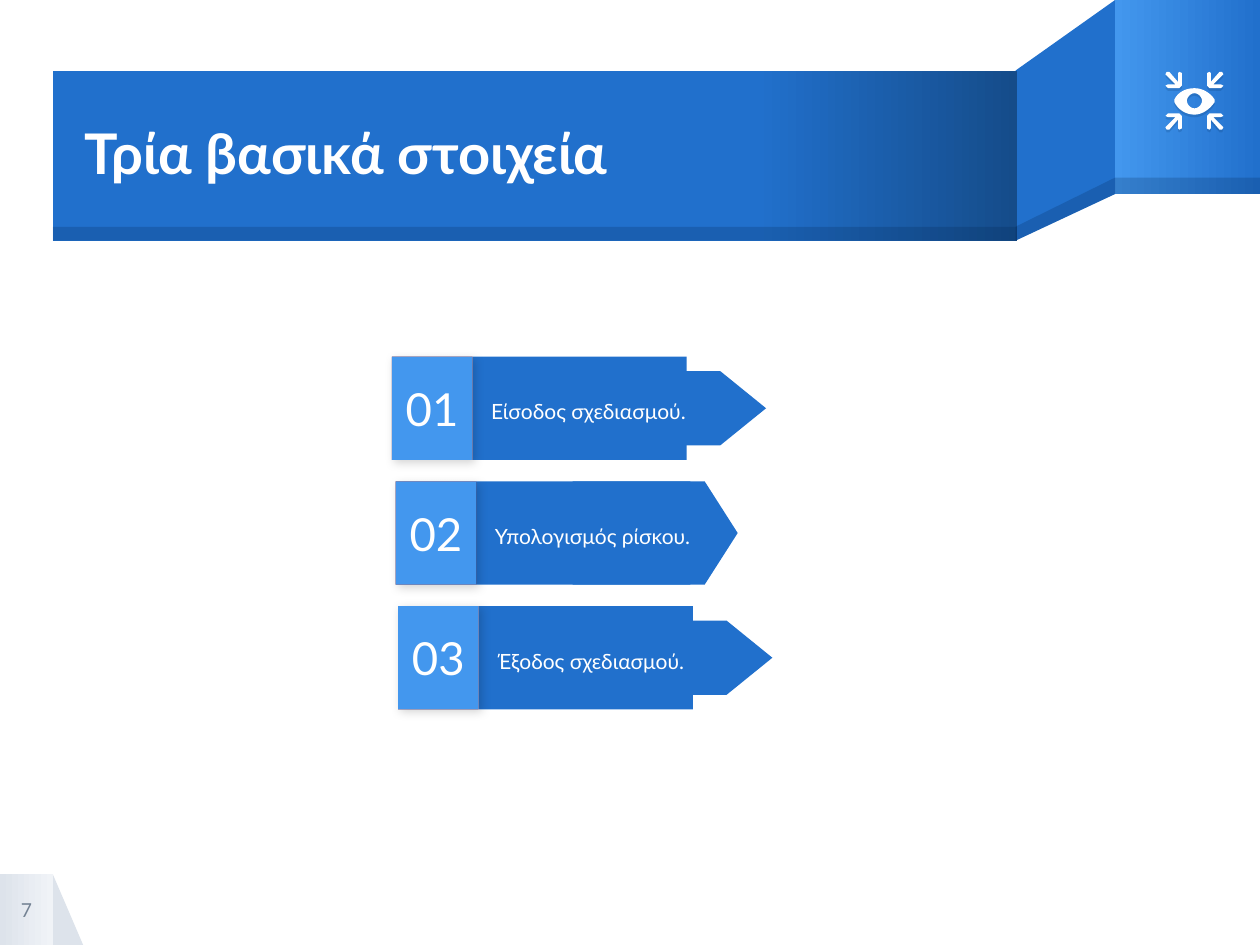
import copy
import lxml.etree
import pptx
import pptx.dml.color
import pptx.enum.shapes
import pptx.enum.text
import pptx.oxml.ns
import pptx.util

TITLE = "Τρία βασικά στοιχεία"
PAGE_NUMBER = "7"
STEPS = [
    {"number": "01", "label": "Είσοδος σχεδιασμού.", "left": 3.11, "arrow": (0.59, 1.82)},
    {"number": "02", "label": "Υπολογισμός ρίσκου.", "left": 3.14, "arrow": (0.82, 1.31)},
    {"number": "03", "label": "Έξοδος σχεδιασμού.", "left": 3.16, "arrow": (0.59, 1.82)},
]
THEME = {
    "font": "Lato",
    "blue": "2170CC", "light": "4397EE", "deep": "154C8A", "shade": "001F46",
    "edge": "B02C20", "white": "FFFFFF", "black": "000000",
    "gray": "DDE3EB", "pale": "F0F3F7", "muted": "748394",
    "title": 32, "number": 26, "label": 12, "page": 11,
}
STEP_TOP, STEP_PITCH, STEP_HEIGHT, NUMBER_WIDTH, BAR_WIDTH = 2.83, 0.99, 0.82, 0.64, 1.7
ARROW_CENTER = 2.06
ICON_CENTER = (9.48, 0.8)
ICON_ARROW = [
    (0.1, -0.22), (0.12, -0.23), (0.13, -0.22), (0.13, -0.15), (0.2, -0.23),
    (0.22, -0.23), (0.23, -0.21), (0.15, -0.13), (0.21, -0.13), (0.23, -0.12),
    (0.21, -0.1), (0.12, -0.1), (0.1, -0.12),
]
EYE_CURVES = [
    [(0.16, 0.01), (0.16, 0.01), (0.16, 0), (0.16, -0.01)],
    [(0.16, -0.01), (0.12, -0.07), (0.06, -0.1), (0, -0.1)],
    [(0, -0.1), (-0.07, -0.1), (-0.13, -0.07), (-0.16, -0.01)],
    [(-0.16, -0.01), (-0.16, 0), (-0.16, 0.01), (-0.16, 0.01)],
    [(-0.16, 0.01), (-0.13, 0.07), (-0.07, 0.11), (0, 0.11)],
    [(0, 0.11), (0.06, 0.11), (0.12, 0.07), (0.16, 0.01)],
]
PUPIL_CURVES = [
    [(0, 0.06), (-0.03, 0.06), (-0.06, 0.03), (-0.06, 0)],
    [(-0.06, 0), (-0.06, -0.03), (-0.03, -0.06), (0, -0.06)],
    [(0, -0.06), (0.03, -0.06), (0.06, -0.03), (0.06, 0)],
    [(0.06, 0), (0.06, 0.03), (0.03, 0.06), (0, 0.06)],
]

Inches = pptx.util.Inches
SHAPE = pptx.enum.shapes.MSO_SHAPE
CENTER = pptx.enum.text.PP_ALIGN.CENTER
qn = pptx.oxml.ns.qn


def rgb(name):
    return pptx.dml.color.RGBColor.from_string(THEME[name])


def paint(shape, color, alpha=None):
    shape.shadow.inherit = False
    shape.line.fill.background()
    shape.fill.solid()
    shape.fill.fore_color.rgb = rgb(color)
    if alpha:
        tint = shape.element.spPr.find(".//" + qn("a:srgbClr"))
        lxml.etree.SubElement(tint, qn("a:alpha"), val=str(alpha * 1000))
    return shape


def paint_gradient(shape, stops):
    paint(shape, stops[0][1])
    shape.fill.gradient()
    shape.fill.gradient_angle = 0
    stop_list = shape.element.spPr.find(".//" + qn("a:gsLst"))
    for _ in stops[2:]:
        stop_list.append(copy.deepcopy(stop_list[0]))
    for stop, (position, color) in zip(shape.fill.gradient_stops, stops):
        stop.position = position
        stop.color.rgb = rgb(color)


def add_shadow(shape, color, alpha, blur, distance, angle):
    effects = shape.element.spPr.find(qn("a:effectLst"))
    shadow = lxml.etree.SubElement(
        effects, qn("a:outerShdw"), blurRad=str(pptx.util.Pt(blur)),
        dist=str(pptx.util.Pt(distance)), dir=str(angle * 60000),
        algn="bl", rotWithShape="0")
    tint = lxml.etree.SubElement(shadow, qn("a:srgbClr"), val=THEME[color])
    lxml.etree.SubElement(tint, qn("a:alpha"), val=str(alpha * 1000))


def add_box(page, kind, left, top, width, height):
    return page.shapes.add_shape(kind, Inches(left), Inches(top), Inches(width), Inches(height))


def add_text_box(page, left, top, width, height):
    return page.shapes.add_textbox(Inches(left), Inches(top), Inches(width), Inches(height))


def add_outline(page, contours, color, alpha=None):
    contours = [[(Inches(x), Inches(y)) for x, y in contour] for contour in contours]
    builder = page.shapes.build_freeform(*contours[0][0])
    builder.add_line_segments(contours[0][1:], close=True)
    for contour in contours[1:]:
        builder.move_to(*contour[0])
        builder.add_line_segments(contour[1:], close=True)
    return paint(builder.convert_to_shape(), color, alpha)


def write(shape, text, size, color="white", inset=0.1, align=None, spacing=None, bold=False):
    frame = shape.text_frame
    frame.word_wrap = True
    frame.auto_size = pptx.enum.text.MSO_AUTO_SIZE.NONE
    frame.vertical_anchor = pptx.enum.text.MSO_ANCHOR.MIDDLE
    frame.margin_left = frame.margin_right = Inches(inset)
    frame.margin_top = frame.margin_bottom = Inches(inset)
    frame.text = text
    para = frame.paragraphs[0]
    para.alignment = align or pptx.enum.text.PP_ALIGN.LEFT
    para.line_spacing = spacing
    para.font.name = THEME["font"]
    para.font.size = pptx.util.Pt(THEME[size])
    para.font.bold = bold
    para.font.color.rgb = rgb(color)


def around_icon(points, flip_x=1, flip_y=1):
    return [(ICON_CENTER[0] + flip_x * x, ICON_CENTER[1] + flip_y * y) for x, y in points]


def sample(curves, count=8):
    points = []
    for a, b, c, d in curves:
        for t in (i / count for i in range(count)):
            u = 1 - t
            points.append(tuple(
                u**3 * a[k] + 3 * u * u * t * b[k] + 3 * u * t * t * c[k] + t**3 * d[k]
                for k in (0, 1)))
    return points


def draw_banner(page):
    paint(add_box(page, SHAPE.RIGHT_TRIANGLE, 0.42, 6.94, 0.24, 0.56), "gray")
    paint_gradient(add_box(page, SHAPE.RECTANGLE, 0, 6.94, 0.42, 0.56),
                   [(0, "gray"), (1, "pale")])
    add_outline(page, [[(8.85, 0), (8.06, 0.56), (8.06, 1.91), (8.85, 1.54)]], "blue")
    paint_gradient(add_box(page, SHAPE.RECTANGLE, 8.85, 0, 1.15, 1.54),
                   [(0, "light"), (1, "blue")])
    paint_gradient(add_box(page, SHAPE.RECTANGLE, 0.42, 0.56, 7.65, 1.35),
                   [(0, "blue"), (0.73, "blue"), (1, "deep")])
    add_outline(page, [[(8.85, 1.41), (8.06, 1.8), (8.06, 1.91), (8.85, 1.54)]], "shade", 20)
    for place in [(8.85, 1.41, 1.15, 0.13), (0.42, 1.8, 7.65, 0.11)]:
        paint(add_box(page, SHAPE.RECTANGLE, *place), "shade", 20)


def draw_icon(page):
    parts = [[around_icon(sample(EYE_CURVES)), around_icon(sample(PUPIL_CURVES))]]
    parts += [[around_icon(ICON_ARROW, x, y)] for y in (1, -1) for x in (1, -1)]
    for contours in parts:
        add_shadow(add_outline(page, contours, "white"), "shade", 15, 0, 1.5, 90)


def draw_step(page, step, top):
    left = step["left"]
    paint(add_box(page, SHAPE.RECTANGLE, left + NUMBER_WIDTH, top, BAR_WIDTH, STEP_HEIGHT), "blue")
    breadth, length = step["arrow"]
    arrow = add_box(page, SHAPE.FLOWCHART_OFFPAGE_CONNECTOR, left + ARROW_CENTER - breadth / 2,
                    top + STEP_HEIGHT / 2 - length / 2, breadth, length)
    arrow.rotation = 270
    paint(arrow, "blue")
    write(add_text_box(page, left + 0.69, top + 0.1, 1.79, 0.64),
          step["label"], "label", spacing=1.15)
    place = (left, top, NUMBER_WIDTH, STEP_HEIGHT)
    add_shadow(paint(add_box(page, SHAPE.RECTANGLE, *place), "edge"), "black", 17, 5.6, 2.2, 45)
    tile = paint(add_box(page, SHAPE.RECTANGLE, *place), "light")
    write(tile, step["number"], "number", align=CENTER)


def main():
    deck = pptx.Presentation()
    deck.slide_width, deck.slide_height = Inches(10), Inches(7.5)
    page = deck.slides.add_slide(deck.slide_layouts[5])
    draw_banner(page)
    draw_icon(page)
    title = page.shapes.title
    title.element.getparent().append(title.element)
    title.left, title.top = Inches(0.67), Inches(0.57)
    title.width, title.height = Inches(7.39), Inches(1.34)
    write(title, TITLE, "title", inset=0, spacing=0.9, bold=True)
    for index, step in reversed(list(enumerate(STEPS))):
        draw_step(page, step, STEP_TOP + index * STEP_PITCH)
    write(add_text_box(page, 0, 6.94, 0.42, 0.56), PAGE_NUMBER, "page", "muted", 0, CENTER)
    deck.save("out.pptx")


if __name__ == "__main__":
    main()
